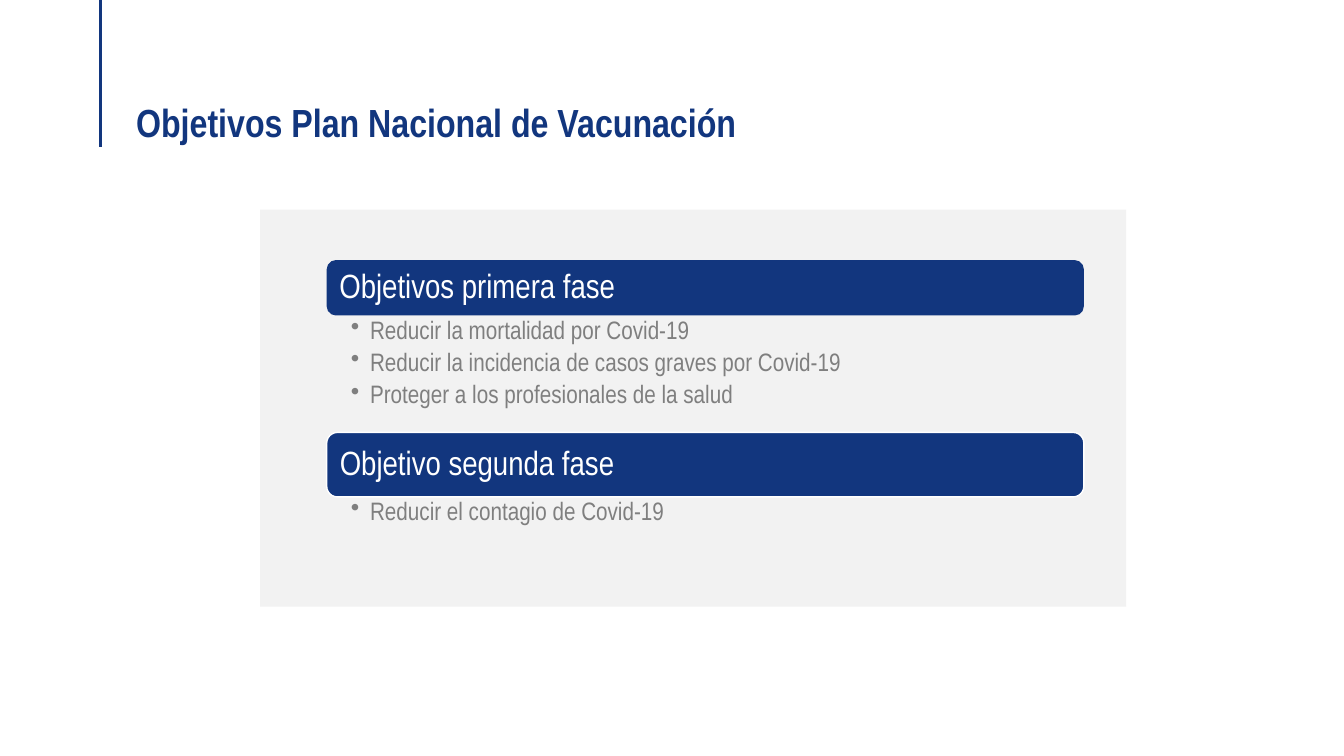
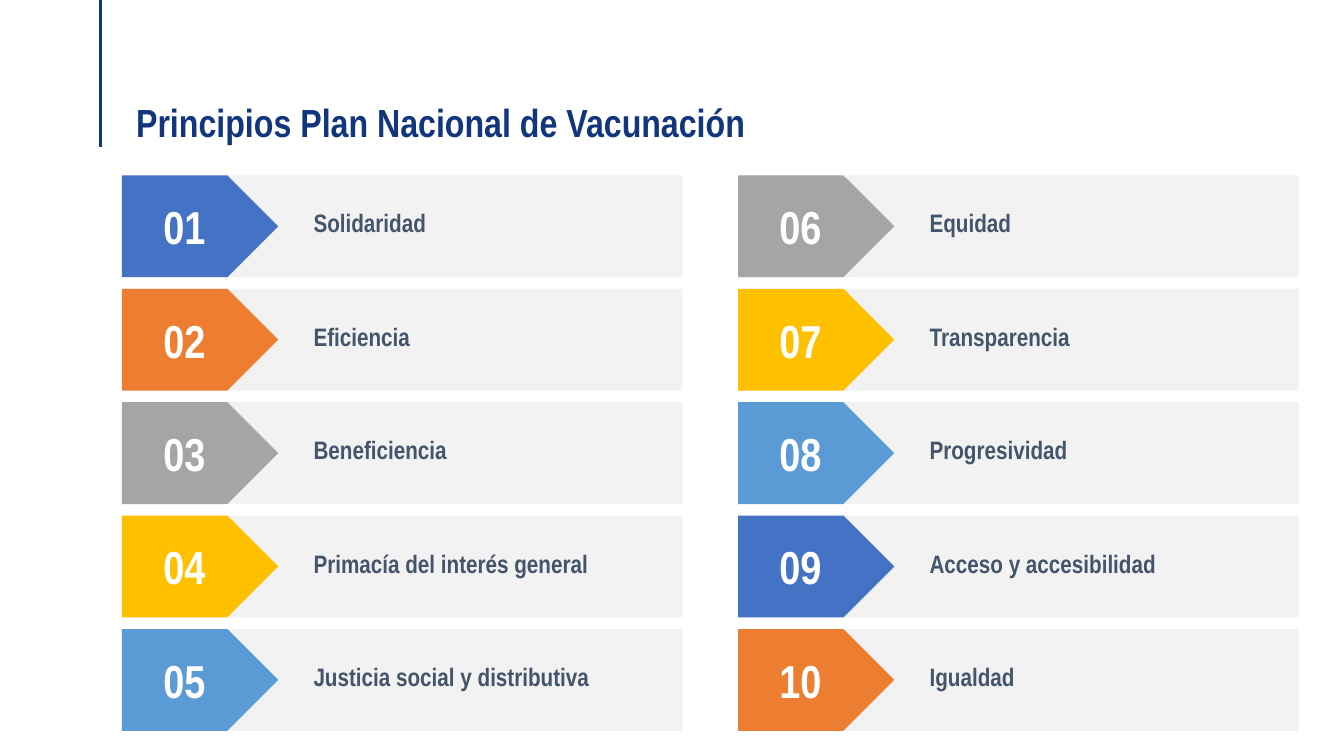
from pptx import Presentation
from pptx.dml.color import RGBColor
from pptx.enum.shapes import MSO_CONNECTOR as Link, MSO_SHAPE as Kind
from pptx.enum.text import MSO_ANCHOR as Anchor, PP_ALIGN as Align
from pptx.oxml.ns import qn
from pptx.util import Inches, Pt
from lxml.etree import SubElement

FONT = "Arial Narrow"
HUES = {"navy": "12367E", "panel": "F2F2F2", "white": "FFFFFF",
        "gray": "7F7F7F", "slate": "44546A"}
TINTS = ["4472C4", "ED7D31", "A5A5A5", "FFC000", "5B9BD5"]

GOALS = "Objetivos Plan Nacional de Vacunación"
PHASES = [
    {"head": "Objetivos primera fase", "top": 2.58, "high": 0.55, "edge": None,
     "items": ["Reducir la mortalidad por Covid-19",
               "Reducir la incidencia de casos graves por Covid-19",
               "Proteger a los profesionales de la salud"]},
    {"head": "Objetivo segunda fase", "top": 4.29, "high": 0.64, "edge": "white",
     "items": ["Reducir el contagio de Covid-19"]},
]

VALUES = "Principios Plan Nacional de Vacunación"
COLUMNS = [
    ["Solidaridad", "Eficiencia", "Beneficiencia",
     "Primacía del interés general", "Justicia social y distributiva"],
    ["Equidad", "Transparencia", "Progresividad",
     "Acceso y accesibilidad", "Igualdad"],
]


def color(code):
    return RGBColor.from_string(HUES.get(code, code))


def write(par, text, size, hue, bold=False):
    run = par.add_run()
    run.text = text
    font = run.font
    font.name, font.size, font.bold = FONT, Pt(size), bold
    font.color.rgb = color(hue)


def frame(shape, pads, anchor):
    body = shape.text_frame
    body.word_wrap = True
    body.vertical_anchor = anchor
    (body.margin_left, body.margin_top,
     body.margin_right, body.margin_bottom) = map(Inches, pads)
    return body


def block(slide, kind, box, fill, edge=None):
    shape = slide.shapes.add_shape(kind, *map(Inches, box))
    shape.shadow.inherit = False
    shape.fill.solid()
    shape.fill.fore_color.rgb = color(fill)
    if edge:
        shape.line.color.rgb = color(edge)
        shape.line.width = Pt(1)
    else:
        shape.line.fill.background()
    return shape


def start(deck, text):
    slide = deck.slides.add_slide(deck.slide_layouts[5])
    rule = slide.shapes.add_connector(
        Link.STRAIGHT, Inches(1), 0, Inches(1), Inches(1.46))
    rule.line.color.rgb = color("navy")
    rule.line.width = Pt(2.25)
    SubElement(rule._element.spPr, qn("a:effectLst"))
    title = slide.shapes.title
    title.left, title.top, title.width, title.height = map(
        Inches, (1.25, 0.93, 11.3, 0.57))
    par = frame(title, (0.1, 0.05, 0.1, 0.05), Anchor.TOP).paragraphs[0]
    par.alignment = Align.LEFT
    write(par, text, 28, "navy", True)
    return slide


def bullet(par):
    props = par._p.get_or_add_pPr()
    props.set("marL", str(Inches(0.19)))
    props.set("indent", str(-Inches(0.19)))
    tint = SubElement(props, qn("a:buClr"))
    SubElement(tint, qn("a:srgbClr")).set("val", HUES["gray"])
    SubElement(props, qn("a:buChar")).set("char", "•")


def phase(slide, head, top, high, edge, items):
    left, wide = 3.24, 7.51
    bar = block(slide, Kind.ROUNDED_RECTANGLE, (left, top, wide, high), "navy", edge)
    par = frame(bar, (0.1, 0.1, 0.1, 0.1), Anchor.MIDDLE).paragraphs[0]
    par.alignment = Align.LEFT
    par.line_spacing = 0.9
    write(par, head, 24, "white")
    area = slide.shapes.add_textbox(*map(Inches, (left, top + high, wide, 1.16)))
    body = frame(area, (0.24, 0.02, 0.14, 0.02), Anchor.TOP)
    for i, item in enumerate(items):
        par = body.add_paragraph() if i else body.paragraphs[0]
        bullet(par)
        par.line_spacing = 0.9
        if i:
            par.space_before = Pt(3.6)
        write(par, item, 18, "gray")


def value(slide, col, row, name):
    left, top, high = 1.21 + 6.11 * col, 1.74 + 1.125 * row, 1.01
    bar = block(slide, Kind.RECTANGLE, (left, top, 5.56, high), "panel")
    par = frame(bar, (1.9, 0, 0.1, 0.07), Anchor.MIDDLE).paragraphs[0]
    par.alignment = Align.LEFT
    write(par, name, 18, "slate", True)
    tint = TINTS[(row + 2 * col) % len(TINTS)]
    tag = block(slide, Kind.PENTAGON, (left, top, 1.55, high), tint)
    par = frame(tag, (0, 0, 0.06, 0), Anchor.MIDDLE).paragraphs[0]
    par.alignment = Align.CENTER
    number = col * len(COLUMNS[0]) + row + 1
    write(par, f"{number:02}", 33, "white", True)


def main():
    """Build the two slides on the national vaccination plan."""
    deck = Presentation()
    deck.slide_width, deck.slide_height = Inches(13.33), Inches(7.5)
    slide = start(deck, GOALS)
    block(slide, Kind.RECTANGLE, (2.58, 2.08, 8.59, 3.94), "panel")
    for item in PHASES:
        phase(slide, **item)
    slide = start(deck, VALUES)
    for col, names in enumerate(COLUMNS):
        for row, name in enumerate(names):
            value(slide, col, row, name)
    deck.save("out.pptx")


if __name__ == "__main__":
    main()
